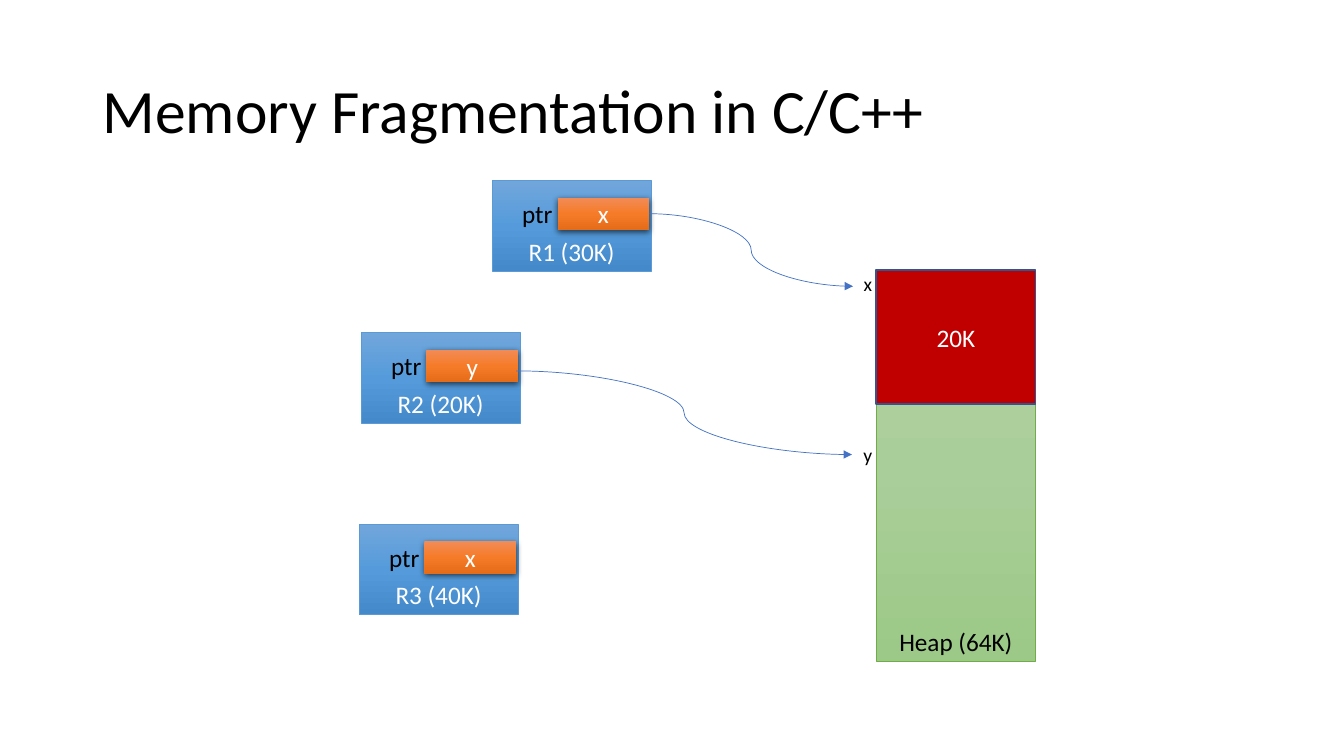
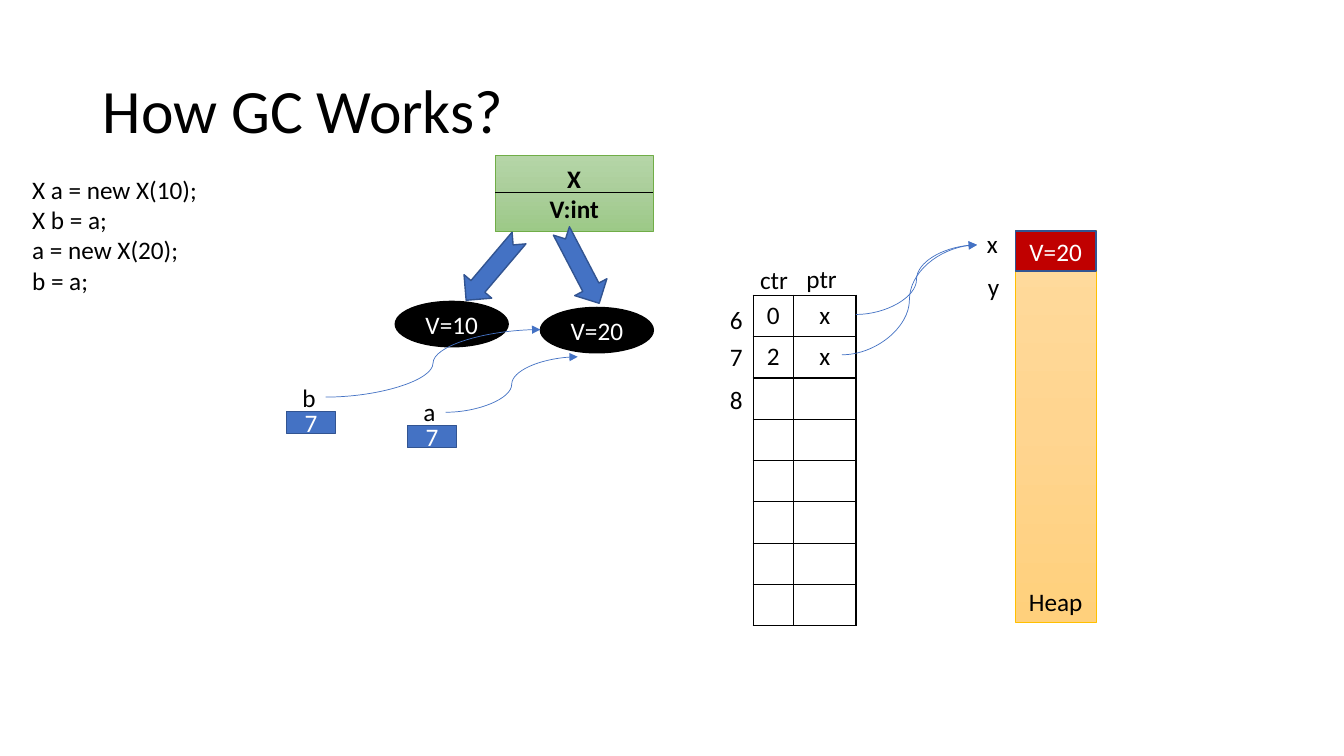
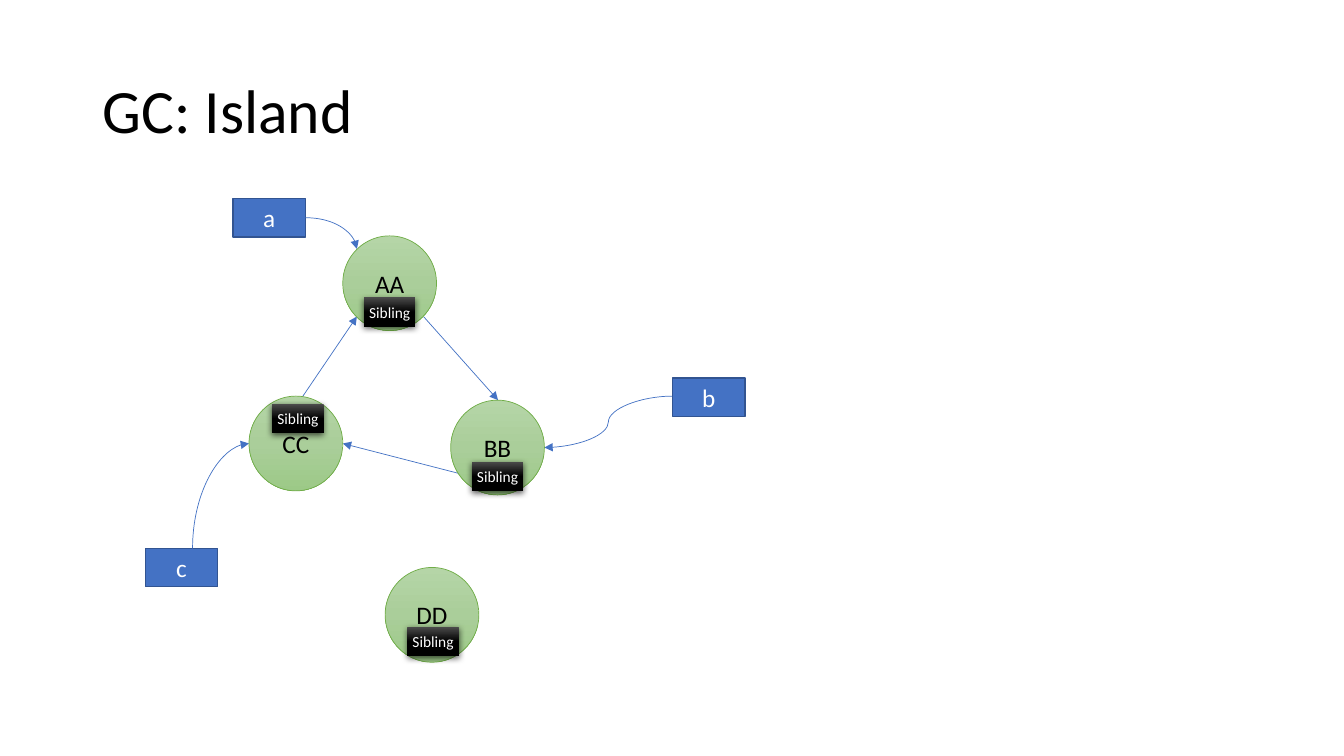
from copy import deepcopy

from lxml.etree import SubElement
from pptx import Presentation
from pptx.dml.color import RGBColor
from pptx.enum.shapes import MSO_CONNECTOR as Link, MSO_SHAPE as Form
from pptx.enum.text import MSO_ANCHOR as Anchor, PP_ALIGN as Align
from pptx.oxml.ns import qn
from pptx.util import Inches, Pt

COLORS = {
    "black": "000000", "white": "FFFFFF", "red": "C00000",
    "blue": "4472C4", "navy": "325491",
    "sky": "5B9BD5", "sky_top": "71A6DB", "sky_mid": "559BDB", "sky_end": "448ACA",
    "leaf": "70AD47", "leaf_top": "B5D5A7", "leaf_mid": "AACE9A", "leaf_end": "9CC987",
    "gold": "FFC000", "gold_top": "FFDB9E", "gold_mid": "FFD590", "gold_end": "FFD07C",
    "rust_top": "F18C57", "rust_mid": "F67B28", "rust_end": "E56C19",
    "coal_top": "4B4B4B", "coal_mid": "000000", "coal_end": "000000",
}


class Deck:
    """Holds the shared style and the slide being drawn."""

    font = "Calibri"
    looks = {
        "record": ("sky", "sky", 0.5, "white"),
        "free": ("leaf", "leaf", 0.5, "black"),
        "heap": ("gold", "gold", 0.5, "black"),
        "pointer": ("rust", None, 0, "white"),
        "sibling": ("coal", None, 0, "white"),
        "used": ("red", "navy", 1, "white"),
        "variable": ("blue", "navy", 1, "white"),
        "object": ("black", "black", 1, "white"),
    }

    def __init__(self):
        self.show = Presentation()
        self.show.slide_width, self.show.slide_height = Inches(13.33), Inches(7.5)

    def color(self, name):
        return RGBColor.from_string(COLORS[name])

    def start(self, title):
        self.slide = self.show.slides.add_slide(self.show.slide_layouts[6])
        heading = self.label(title, 0.92, 0.4, 11.5, 1.45, size=44)
        heading.vertical_anchor = Anchor.MIDDLE
        heading.paragraphs[0].line_spacing = 0.9

    def fill_text(self, frame, text, size=18, color="black", align=Align.LEFT, bold=False):
        for number, line in enumerate(text.split("\n")):
            paragraph = frame.add_paragraph() if number else frame.paragraphs[0]
            paragraph.alignment = align
            run = paragraph.add_run()
            run.text = line
            run.font.name, run.font.size, run.font.bold = self.font, Pt(size), bold
            run.font.color.rgb = self.color(color)

    def label(self, text, left, top, width, height=0.4, size=18, wrap=True,
              align=Align.LEFT, inset=0.1):
        area = map(Inches, (left, top, width, height))
        frame = self.slide.shapes.add_textbox(*area).text_frame
        frame.word_wrap = wrap
        frame.margin_left = frame.margin_right = Inches(inset)
        self.fill_text(frame, text, size, align=align)
        return frame

    def shade(self, shape, name):
        shape.fill.gradient()
        shape.fill.gradient_angle = 270
        stops = shape._element.spPr.find(".//" + qn("a:gsLst"))
        stops.insert(1, deepcopy(stops[0]))
        for stop, part, place in zip(shape.fill.gradient_stops, ("top", "mid", "end"), (0, 0.5, 1)):
            stop.color.rgb = self.color(f"{name}_{part}")
            stop.position = place

    def cast_shadow(self, shape):
        effects = shape._element.spPr.find(qn("a:effectLst"))
        shadow = SubElement(effects, qn("a:outerShdw"), blurRad=str(Pt(4.5)),
                            dist=str(Pt(1.5)), dir="5400000", algn="ctr", rotWithShape="0")
        tone = SubElement(shadow, qn("a:srgbClr"), val=COLORS["black"])
        SubElement(tone, qn("a:alpha"), val="63000")

    def box(self, look, text, left, top, width, height, form=Form.RECTANGLE,
            anchor=Anchor.MIDDLE, size=18, bold=False, inset=None, turn=0):
        fill, edge, weight, ink = self.looks[look]
        shape = self.slide.shapes.add_shape(form, *map(Inches, (left, top, width, height)))
        shape.rotation = turn
        shape.shadow.inherit = False
        if f"{fill}_top" in COLORS:
            self.shade(shape, fill)
        else:
            shape.fill.solid()
            shape.fill.fore_color.rgb = self.color(fill)
        if edge:
            shape.line.color.rgb = self.color(edge)
            shape.line.width = Pt(weight)
        else:
            shape.line.fill.background()
            self.cast_shadow(shape)
        if text:
            frame = shape.text_frame
            frame.word_wrap, frame.vertical_anchor = True, anchor
            if inset is not None:
                frame.margin_left = frame.margin_right = Inches(inset)
                frame.margin_top = frame.margin_bottom = Inches(inset)
            self.fill_text(frame, text, size, ink, Align.CENTER, bold)

    def line(self, start, end, link=Link.CURVE, color="blue", arrow=True):
        line = self.slide.shapes.add_connector(link, *map(Inches, (*start, *end)))
        line.line.color.rgb = self.color(color)
        line.line.width = Pt(0.5)
        properties = line._element.spPr
        if arrow:
            SubElement(properties.find(qn("a:ln")), qn("a:tailEnd"), type="triangle")
        SubElement(properties, qn("a:effectLst"))
        return line

    def bend(self, start, end, upright=False):
        if upright:
            middle_x, middle_y = (start[0] + end[0]) / 2, (start[1] + end[1]) / 2
            half_x, half_y = (start[1] - end[1]) / 2, (end[0] - start[0]) / 2
            start = middle_x + half_x, middle_y + half_y
            end = middle_x - half_x, middle_y - half_y
        properties = self.line(start, end)._element.spPr
        properties.find(qn("a:prstGeom")).set("prst", "curvedConnector2")
        if upright:
            properties.find(qn("a:xfrm")).set("rot", "5400000")

    def grid(self, rows, left, top, widths, height):
        area = map(Inches, (left, top, sum(widths), height * len(rows)))
        table = self.slide.shapes.add_table(len(rows), len(widths), *area).table
        table.first_row = table.horz_banding = False
        for column, width in zip(table.columns, widths):
            column.width = Inches(width)
        for row, texts in zip(table.rows, rows):
            row.height = Inches(height)
            for cell, text in zip(row.cells, texts):
                cell.fill.background()
                self.frame_cell(cell)
                if text:
                    self.fill_text(cell.text_frame, text, align=Align.CENTER)

    def frame_cell(self, cell):
        properties = cell._tc.get_or_add_tcPr()
        for place, side in enumerate("LRTB"):
            edge = SubElement(properties, qn(f"a:ln{side}"), w=str(Pt(1)))
            tone = SubElement(SubElement(edge, qn("a:solidFill")), qn("a:srgbClr"))
            tone.set("val", COLORS["black"])
            properties.insert(place, edge)

    def record(self, name, target, left, top):
        self.box("record", name, left, top, 1.58, 0.9, anchor=Anchor.BOTTOM)
        self.label("ptr", left + 0.2, top + 0.13, 0.58)
        self.box("pointer", target, left + 0.65, top + 0.17, 0.91, 0.32)

    def node(self, name, left, top, tag_left, tag_top):
        self.box("free", name, left, top, 0.93, 0.94, Form.OVAL)
        self.box("sibling", "Sibling", tag_left, tag_top, 0.51, 0.29, size=11, inset=0)


def fragmentation(deck):
    deck.start("Memory Fragmentation in C/C++")
    deck.box("free", "Heap (64K)", 8.69, 2.68, 1.58, 3.88, anchor=Anchor.BOTTOM)
    for name, target, left, top in (("R1 (30K)", "x", 4.88, 1.79),
                                    ("R2 (20K)", "y", 3.58, 3.3),
                                    ("R3 (40K)", "x", 3.56, 5.2)):
        deck.record(name, target, left, top)
    for address, top in (("x", 2.65), ("y", 4.34)):
        deck.label(address, 8.23, top, 0.42, 0.34, size=14, align=Align.RIGHT, inset=0)
    deck.box("used", "20K", 8.69, 2.68, 1.58, 1.33)
    deck.line((6.44, 2.12), (8.46, 2.84))
    deck.line((5.12, 3.68), (8.45, 4.51))


def collection(deck):
    deck.start("How GC Works?")
    deck.box("free", "X\nV:int", 4.91, 1.54, 1.57, 0.76, bold=True)
    deck.line((4.91, 1.91), (6.48, 1.91), Link.STRAIGHT, "black", arrow=False)
    deck.grid([("0", "x"), ("2", "x")] + [("", "")] * 6, 7.47, 2.93, (0.4, 0.62), 0.41)
    deck.box("heap", "Heap", 10.07, 2.29, 0.8, 3.88, anchor=Anchor.BOTTOM)
    deck.box("used", "V=20", 10.07, 2.29, 0.8, 0.4)
    for text, left, top, width in (("ctr", 7.44, 2.57, 0.48), ("ptr", 7.9, 2.56, 0.51),
                                   ("x", 9.69, 2.22, 0.31), ("y", 9.7, 2.64, 0.32)):
        deck.label(text, left, top, width, wrap=False)
    for index, top in (("6", 2.97), ("7", 3.34), ("8", 3.76)):
        deck.label(index, 7.14, top, 0.48)
    deck.label("X a = new X(10);\nX b = a;\na = new X(20);\nb = a;", 0.22, 1.68, 2.71, 1.62)
    for left, top, turn in ((4.48, 2.49, 130.3), (5.35, 2.47, 62.4)):
        deck.box("variable", "", left, top, 0.81, 0.36, Form.NOTCHED_RIGHT_ARROW, turn=turn)
    for value, left, top in (("V=10", 3.92, 2.99), ("V=20", 5.36, 3.05)):
        deck.box("object", value, left, top, 1.12, 0.45, Form.OVAL)
    for name, left, top in (("a", 4.04, 4.22), ("b", 2.84, 4.08)):
        deck.label(name, left + 0.06, top - 0.34, 0.33, wrap=False)
        deck.box("variable", "7", left, top, 0.49, 0.22)
    for start, end in (((4.42, 4.09), (5.73, 3.54)), ((3.23, 3.94), (5.36, 3.27)),
                       ((8.49, 3.12), (9.69, 2.43)), ((8.35, 3.52), (9.69, 2.43))):
        deck.line(start, end)


def island(deck):
    deck.start("GC: Island")
    for name, left, top in (("a", 2.31, 1.97), ("b", 6.67, 3.75), ("c", 1.44, 5.44)):
        deck.box("variable", name, left, top, 0.72, 0.38)
    for start, end in (((4.2, 3.14), (4.94, 3.97)), ((4.68, 4.73), (3.4, 4.4)),
                       ((2.95, 4.01), (3.54, 3.14))):
        deck.line(start, end, Link.STRAIGHT)
    deck.bend((3.03, 2.16), (3.54, 2.47))
    deck.bend((1.91, 5.44), (2.47, 4.4), upright=True)
    deck.line((6.67, 3.93), (5.4, 4.44))
    for name, left, top, tag_left, tag_top in (("AA", 3.4, 2.34, 3.61, 2.95),
                                               ("CC", 2.47, 3.93, 2.7, 4.01),
                                               ("BB", 4.47, 3.97, 4.68, 4.58),
                                               ("DD", 3.82, 5.63, 4.04, 6.22)):
        deck.node(name, left, top, tag_left, tag_top)


def main():
    deck = Deck()
    for draw in (fragmentation, collection, island):
        draw(deck)
    deck.show.save("out.pptx")


if __name__ == "__main__":
    main()
